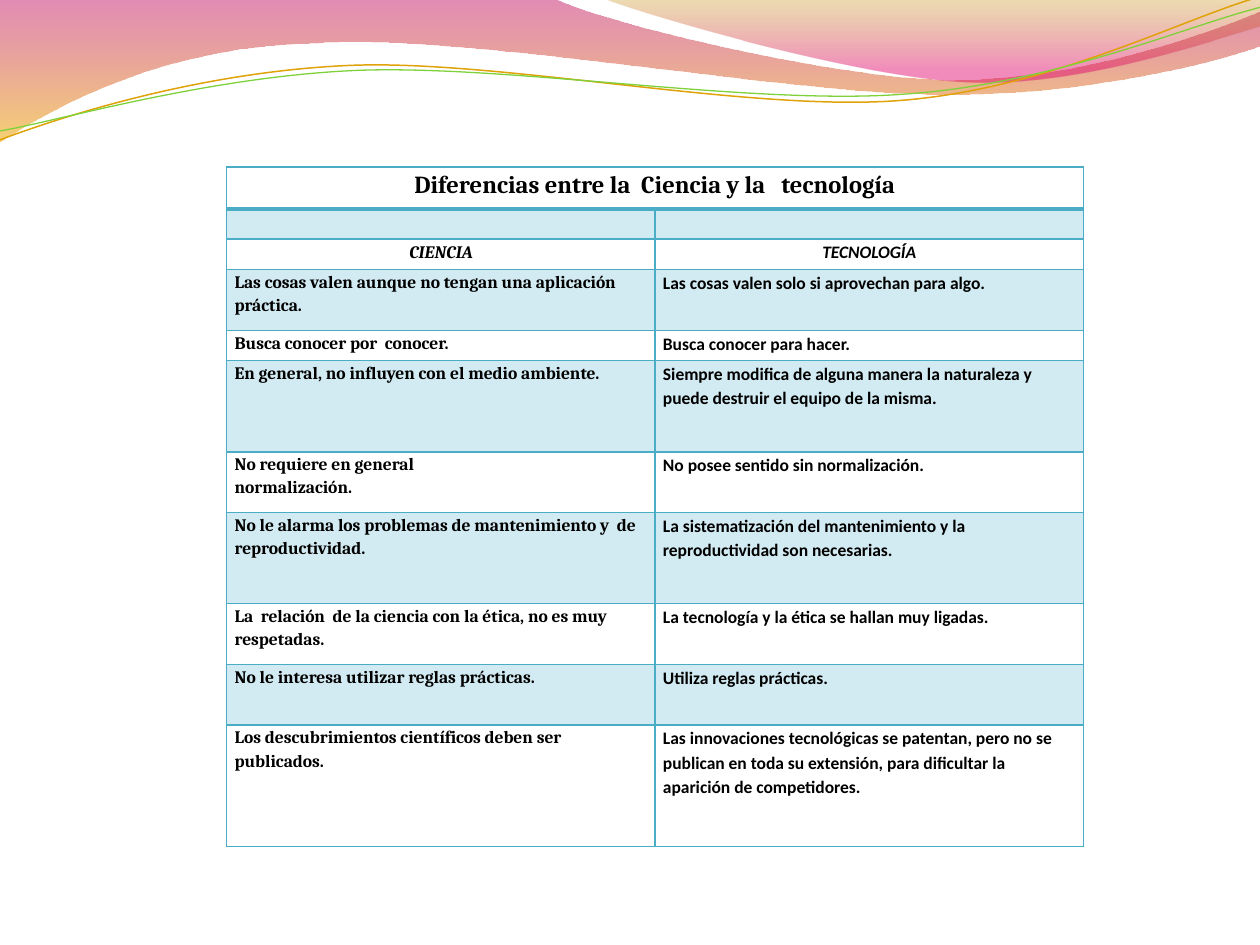
from dataclasses import dataclass

from lxml import etree
from pptx import Presentation
from pptx import util as u
from pptx.dml.color import RGBColor
from pptx.enum import text
from pptx.oxml import ns


@dataclass(frozen=True)
class Theme:
    ink: str = "000000"
    border: str = "4BACC6"
    band: str = "D2EAF1"
    gold: str = "E0A209"
    green: str = "7FD13B"
    wide_wave: tuple = ((0, "BD0059", 45), (100, "F0AB00", 55))
    short_wave: tuple = ((0, "C38B00", 30), (80, "E1006B", 45))
    science_font: str = "Cambria"
    technology_font: str = "Calibri"
    title_size: int = 14
    body_size: int = 10
    thin: float = 1
    thick: float = 2.25


THEME = Theme()

WIDE_WAVE = [
    (0, 0), (11.18, -0.03),
    (12.09, 0.43, 16.87, 1.6, 19.25, 1.6),
    (21.79, 1.6, 24.33, 0.66, 25.4, 0.23),
    (25.43, 0.91),
    (24.97, 1.12, 22.1, 1.93, 18.95, 1.9),
    (15.8, 1.9, 9.7, 0.71, 6.53, 0.86),
    (3.28, 0.91, 1.17, 2.11, -0.03, 2.87),
]
SHORT_WAVE = [
    (12.17, -0.03),
    (12.93, 0.28, 17.32, 1.57, 19.53, 1.65),
    (21.74, 1.75, 24.41, 0.81, 25.4, 0.53),
    (25.4, 0),
]
GOLD_LINE = [
    (0, 2.82),
    (1.22, 2.36, 4.01, 1.45, 7.04, 1.32),
    (10.03, 1.19, 15.06, 2.26, 18.11, 2.03),
    (21.16, 1.8, 23.83, 0.38, 25.35, -0.05),
]
GREEN_LINE = [
    (0, 2.64),
    (1.19, 2.44, 4.17, 1.55, 7.19, 1.42),
    (10.24, 1.3, 15.16, 2.13, 18.21, 1.9),
    (21.23, 1.7, 23.9, 0.53, 25.4, 0.15),
]

TITLE = "Diferencias entre la  Ciencia y la   tecnología"
ROWS = [
    (1, "", ""),
    (1, "CIENCIA", "TECNOLOGÍA"),
    (2, "Las cosas valen aunque no tengan una aplicación práctica.",
     "Las cosas valen solo si aprovechan para algo."),
    (1, "Busca conocer por  conocer.", "Busca conocer para hacer."),
    (3, "En general, no influyen con el medio ambiente.",
     "Siempre modifica de alguna manera la naturaleza y puede destruir "
     "el equipo de la misma."),
    (2, "No requiere en general\nnormalización.",
     "No posee sentido sin normalización."),
    (3, "No le alarma los problemas de mantenimiento y  de reproductividad.",
     "La sistematización del mantenimiento y la reproductividad son necesarias."),
    (2, "La  relación  de la ciencia con la ética, no es muy respetadas.",
     "La tecnología y la ética se hallan muy ligadas."),
    (2, "No le interesa utilizar reglas prácticas.", "Utiliza reglas prácticas."),
    (4, "Los descubrimientos científicos deben ser publicados.",
     "Las innovaciones tecnológicas se patentan, pero no se publican en toda "
     "su extensión, para dificultar la aparición de competidores."),
]
HEADING_ROW = 2


def add_curve(page, segments, closed):
    points = [(u.Cm(part[i]), u.Cm(part[i + 1]))
              for part in segments for i in range(0, len(part), 2)]
    builder = page.shapes.build_freeform(*points[0])
    builder.add_line_segments(points[1:], close=closed)
    shape = builder.convert_to_shape()
    shape.shadow.inherit = False
    steps = iter(shape.element.findall(".//" + ns.qn("a:lnTo")))
    for part in segments[1:]:
        step = next(steps)
        if len(part) == 6:
            step.addprevious(etree.Element(ns.qn("a:cubicBezTo")))
            bezier = step.getprevious()
            for control in (step, next(steps), next(steps)):
                bezier.append(control[0])
                control.getparent().remove(control)
    return shape


def add_wave(page, segments, stops):
    shape = add_curve(page, segments, True)
    shape.line.fill.background()
    shape.fill.gradient()
    shape.fill.gradient_angle = 270
    for stop, (position, color, opacity) in zip(shape.fill.gradient_stops, stops):
        stop.position = position / 100
        stop.color.rgb = RGBColor.from_string(color)
    for node, stop in zip(shape.element.iter(ns.qn("a:gs")), stops):
        etree.SubElement(node[0], ns.qn("a:alpha"), val=str(stop[2] * 1000))


def add_wavy_line(page, segments, color, width):
    shape = add_curve(page, segments, False)
    shape.fill.background()
    shape.line.color.rgb = RGBColor.from_string(color)
    shape.line.width = u.Pt(width)


def set_borders(cell, top, bottom):
    properties = cell._tc.get_or_add_tcPr()
    widths = {"L": THEME.thin, "R": THEME.thin, "T": top, "B": bottom}
    for side, width in widths.items():
        line = etree.SubElement(properties, ns.qn("a:ln" + side),
                                w=str(u.Pt(width)))
        fill = etree.SubElement(line, ns.qn("a:solidFill"))
        etree.SubElement(fill, ns.qn("a:srgbClr"), val=THEME.border)


def format_cell(cell, row):
    set_borders(cell, THEME.thick if row == 1 else THEME.thin,
                THEME.thick if row == 0 else THEME.thin)
    if row % 2:
        cell.fill.solid()
        cell.fill.fore_color.rgb = RGBColor.from_string(THEME.band)
    else:
        cell.fill.background()
    cell.margin_left = cell.margin_right = u.Cm(0.16)
    cell.margin_top = cell.margin_bottom = 0


def write_cell(cell, words, font, size, centered, italic):
    for number, line in enumerate(words.split("\n")):
        frame = cell.text_frame
        para = frame.add_paragraph() if number else frame.paragraphs[0]
        para.line_spacing = 1.15
        para.alignment = text.PP_ALIGN.CENTER if centered else text.PP_ALIGN.LEFT
        if not line:
            etree.SubElement(para._p, ns.qn("a:endParaRPr"), sz=str(size * 100))
            continue
        span = para.add_run()
        span.text = line
        span.font.name = font
        span.font.size = u.Pt(size)
        span.font.bold = True
        span.font.italic = italic
        span.font.color.rgb = RGBColor.from_string(THEME.ink)


def add_comparison(page):
    width, height, title_height = u.Cm(17.27), u.Cm(13.7), u.Cm(0.84)
    unit = (height - title_height) // sum(row[0] for row in ROWS)
    table = page.shapes.add_table(len(ROWS) + 1, 2, u.Cm(4.57), u.Cm(3.37),
                                  width, height).table
    table.first_row = table.horz_banding = False
    for column in table.columns:
        column.width = width // 2
    table.rows[0].height = title_height
    for cell in table.rows[0].cells:
        format_cell(cell, 0)
    table.cell(0, 0).merge(table.cell(0, 1))
    write_cell(table.cell(0, 0), TITLE, THEME.science_font,
               THEME.title_size, True, False)
    fonts = (THEME.science_font, THEME.technology_font)
    for row, (lines, *words) in enumerate(ROWS, 1):
        table.rows[row].height = unit * lines
        heading = row == HEADING_ROW
        for column, font in enumerate(fonts):
            cell = table.cell(row, column)
            format_cell(cell, row)
            write_cell(cell, words[column], font, THEME.body_size,
                       heading, heading)


def main():
    deck = Presentation()
    deck.slide_width, deck.slide_height = u.Cm(25.4), u.Cm(19.05)
    page = deck.slides.add_slide(deck.slide_layouts.get_by_name("Blank"))
    add_wave(page, WIDE_WAVE, THEME.wide_wave)
    add_wave(page, SHORT_WAVE, THEME.short_wave)
    add_wavy_line(page, GOLD_LINE, THEME.gold, 0.85)
    add_wavy_line(page, GREEN_LINE, THEME.green, 0.75)
    add_comparison(page)
    deck.save("out.pptx")


main()
